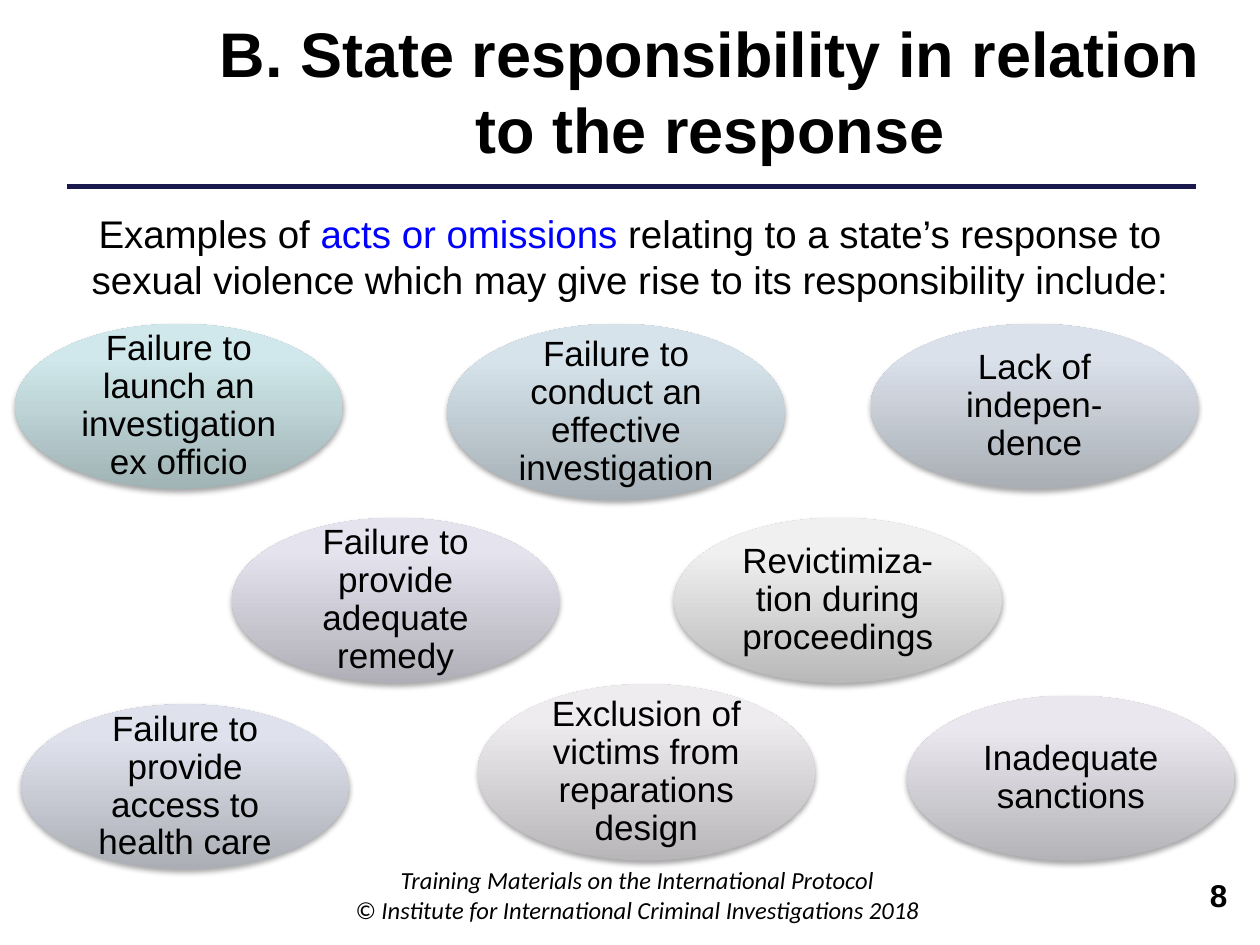
from lxml.etree import SubElement
from pptx import Presentation
from pptx.dml.color import RGBColor
from pptx.enum.shapes import MSO_CONNECTOR, MSO_SHAPE
from pptx.enum.text import MSO_ANCHOR, MSO_AUTO_SIZE, PP_ALIGN
from pptx.oxml import parse_xml
from pptx.oxml.ns import nsdecls, qn
from pptx.util import Inches, Pt

BLACK = RGBColor(0x00, 0x00, 0x00)
BLUE = RGBColor(0x00, 0x00, 0xFF)
NAVY = RGBColor(0x19, 0x19, 0x4D)

TITLE = "B. State responsibility in relation to the response"
INTRO = [
    ("Examples of ", BLACK),
    ("acts or omissions ", BLUE),
    ("relating to a state’s response to sexual violence which may give rise "
     "to its responsibility include:", BLACK),
]
FOOTER = [
    "Training Materials on the International Protocol",
    "© Institute for International Criminal Investigations 2018",
]
PAGE_NUMBER = "8"

NORMAL, LARGE = (2.6, 1.31), (2.68, 1.4)
TOP_ROW, MIDDLE_ROW = 2.57, 4.11
# text, left, top, size, side margin, colours from bottom to top
FAILURES = [
    ("Failure to launch an investigation ex officio", 0.12, TOP_ROW, NORMAL, 0.08,
     ("A0B3B5", "D0E8EB", "D1EAEC")),
    ("Failure to conduct an effective investigation", 3.55, TOP_ROW, LARGE, 0.07,
     ("A5AFB5", "D6E3EB", "D6E5ED")),
    ("Lack of indepen-dence", 6.91, TOP_ROW, NORMAL, 0.08,
     ("A9AEB5", "DBE1EB", "DCE2ED")),
    ("Failure to provide access to health care", 0.17, 5.59, NORMAL, 0,
     ("ACAEB6", "DFE2EC", "E0E3ED")),
    ("Failure to provide adequate remedy", 1.84, MIDDLE_ROW, NORMAL, 0.08,
     ("B0AFB7", "E5E4EE", "E6E4EF")),
    ("Inadequate sanctions", 7.2, 5.52, NORMAL, 0,
     ("B4B3B7", "EAE8EE", "EBE9EF")),
    ("Exclusion of victims from reparations design", 3.79, 5.43, LARGE, 0,
     ("B8B6B9", "EFECF0", "F0EDF1")),
    ("Revictimiza-tion during proceedings", 5.35, MIDDLE_ROW, NORMAL, 0.08,
     ("BAB9BA", "F1F0F1", "F3F1F3")),
]
GRADIENT_STOPS = (0, 80, 100)


def set_font(font, size, color=BLACK, name="Arial", bold=False, italic=False):
    font.name, font.size = name, Pt(size)
    font.bold, font.italic = bold, italic
    font.color.rgb = color


def add_text_box(slide, left, top, width, height):
    box = slide.shapes.add_textbox(*map(Inches, (left, top, width, height)))
    box.text_frame.word_wrap = True
    return box.text_frame


def shade(shape, colors):
    """Give the shape an upward three-stop gradient and a soft shadow below."""
    stops = "".join(
        f'<a:gs pos="{stop * 1000}"><a:srgbClr val="{color}"/></a:gs>'
        for stop, color in zip(GRADIENT_STOPS, colors))
    gradient = parse_xml(
        f'<a:gradFill {nsdecls("a")} rotWithShape="1"><a:gsLst>{stops}</a:gsLst>'
        '<a:lin ang="16200000" scaled="0"/></a:gradFill>')
    shape.line.fill.background()
    shape.shadow.inherit = False
    properties = shape.element.spPr
    properties.find(qn("a:prstGeom")).addnext(gradient)
    properties.find(qn("a:effectLst")).append(parse_xml(
        f'<a:outerShdw {nsdecls("a")} blurRad="40000" dist="23000" dir="5400000" '
        'rotWithShape="0"><a:srgbClr val="000000"><a:alpha val="35000"/>'
        '</a:srgbClr></a:outerShdw>'))


def add_failure(slide, text, left, top, size, side_margin, colors):
    oval = slide.shapes.add_shape(
        MSO_SHAPE.OVAL, *map(Inches, (left, top, *size)))
    shade(oval, colors)
    frame = oval.text_frame
    frame.word_wrap = True
    frame.vertical_anchor = MSO_ANCHOR.MIDDLE
    frame.margin_left = frame.margin_right = Inches(side_margin)
    frame.margin_top = frame.margin_bottom = Inches(0.08)
    frame.text = text
    paragraph = frame.paragraphs[0]
    paragraph.alignment = PP_ALIGN.CENTER
    paragraph.line_spacing = 0.9
    set_font(paragraph.runs[0].font, 20)


def main():
    deck = Presentation()
    deck.slide_width, deck.slide_height = Inches(10), Inches(7.5)
    slide = deck.slides.add_slide(deck.slide_layouts[5])

    rule = slide.shapes.add_connector(
        MSO_CONNECTOR.STRAIGHT, *map(Inches, (9.49, 1.48, 0.53, 1.48)))
    rule.line.color.rgb, rule.line.width = NAVY, Pt(2.5)
    SubElement(rule.element.spPr, qn("a:effectLst"))

    title = slide.shapes.title
    title.left, title.top, title.width, title.height = map(
        Inches, (1.54, 0.06, 8.19, 1.31))
    heading = title.text_frame
    heading.text = TITLE
    heading.auto_size = MSO_AUTO_SIZE.NONE
    heading.vertical_anchor = MSO_ANCHOR.MIDDLE
    heading.paragraphs[0].alignment = PP_ALIGN.CENTER
    set_font(heading.paragraphs[0].runs[0].font, 36, bold=True)

    footer = add_text_box(slide, 2.56, 6.82, 5, 0.63)
    footer.text = "\n".join(FOOTER)
    for paragraph in footer.paragraphs:
        paragraph.alignment = PP_ALIGN.CENTER
        set_font(paragraph.runs[0].font, 14, name="Calibri", italic=True)

    for failure in FAILURES:
        add_failure(slide, *failure)

    number = add_text_box(slide, 9.02, 6.9, 0.99, 0.4)
    number.margin_right = Inches(0.27)
    number.text = PAGE_NUMBER
    number.paragraphs[0].alignment = PP_ALIGN.RIGHT
    set_font(number.paragraphs[0].runs[0].font, 18, bold=True)

    intro = add_text_box(slide, 0.51, 1.62, 8.98, 0.84).paragraphs[0]
    intro.alignment = PP_ALIGN.CENTER
    for text, color in INTRO:
        run = intro.add_run()
        run.text = text
        set_font(run.font, 22, color)

    deck.save("out.pptx")


if __name__ == "__main__":
    main()
